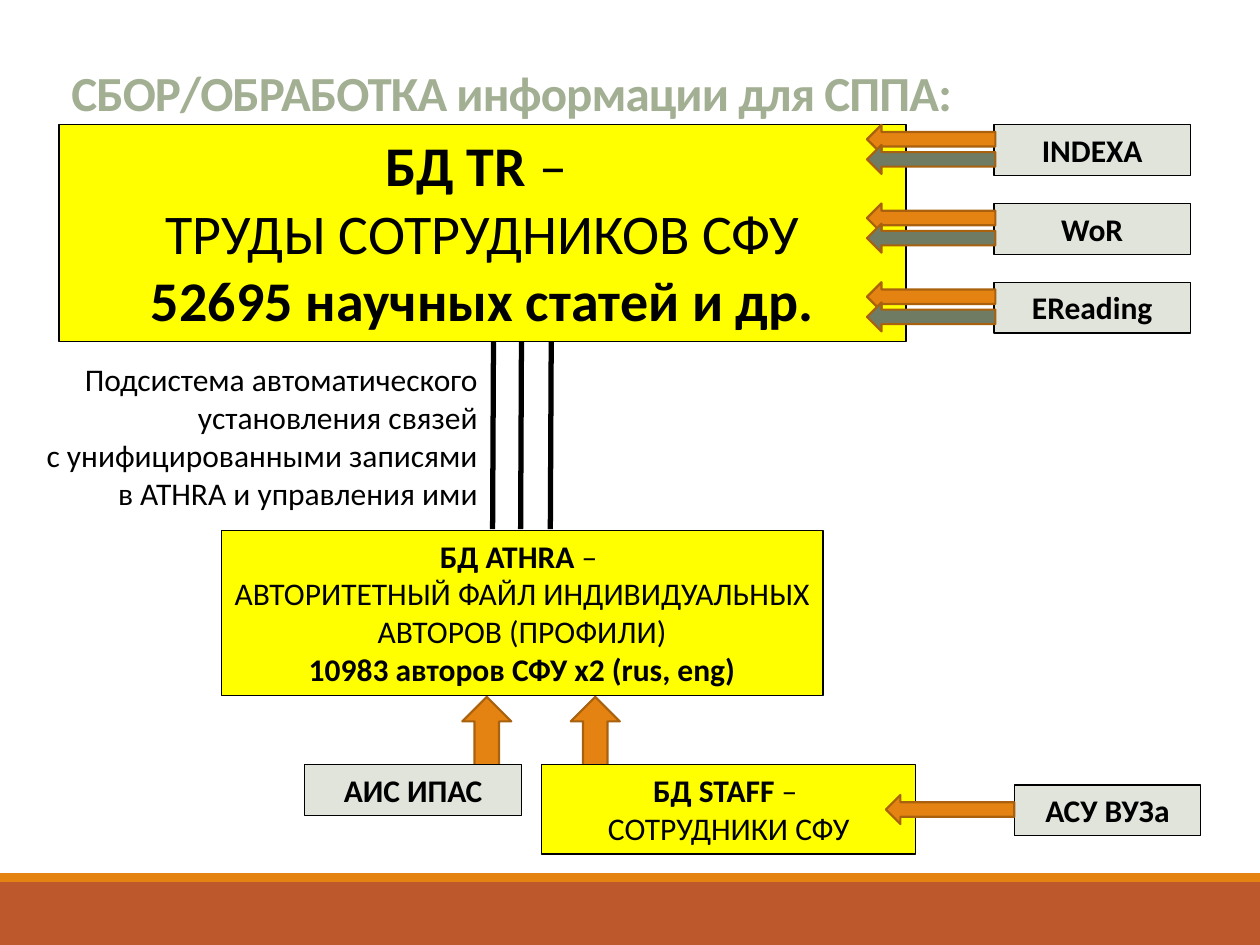
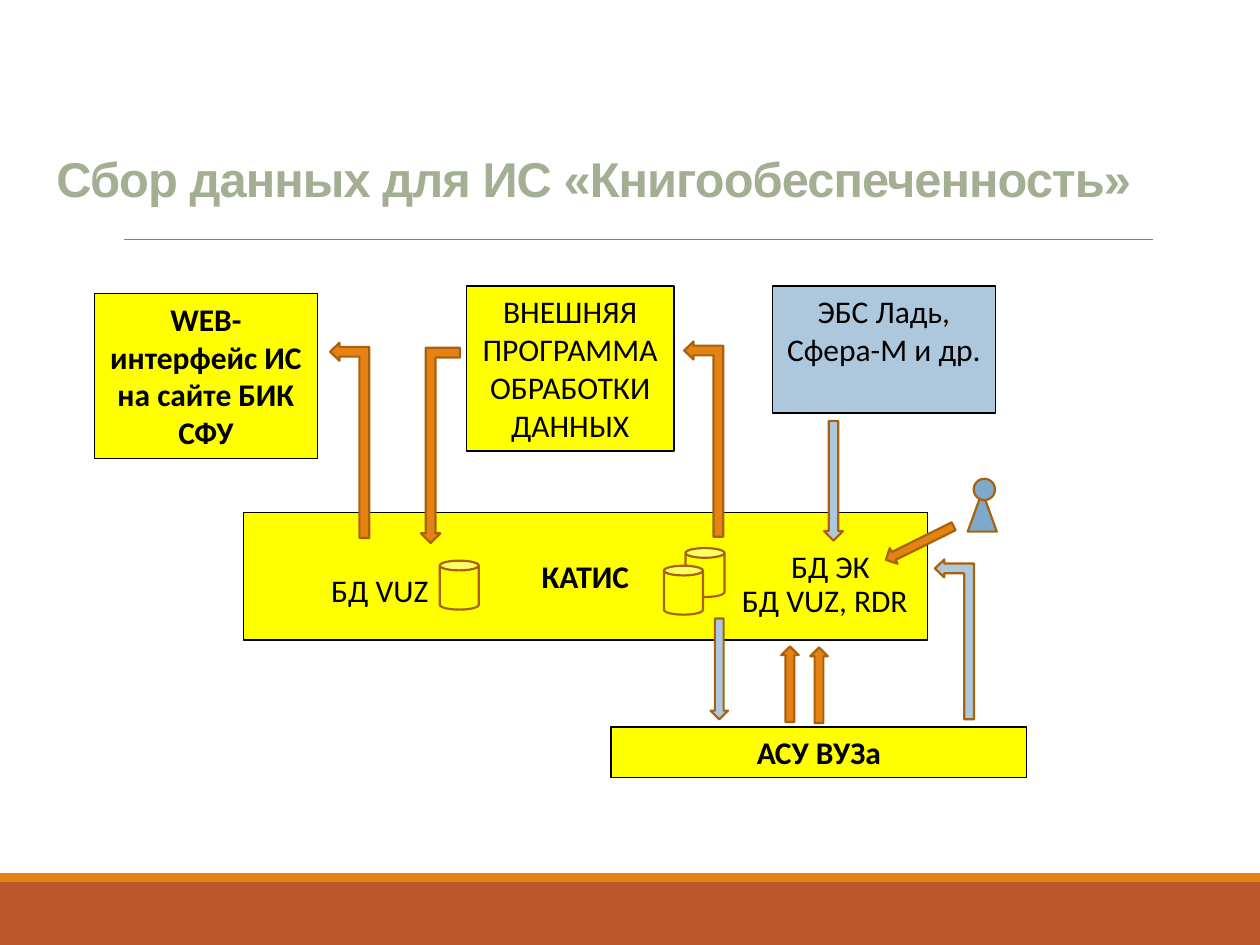
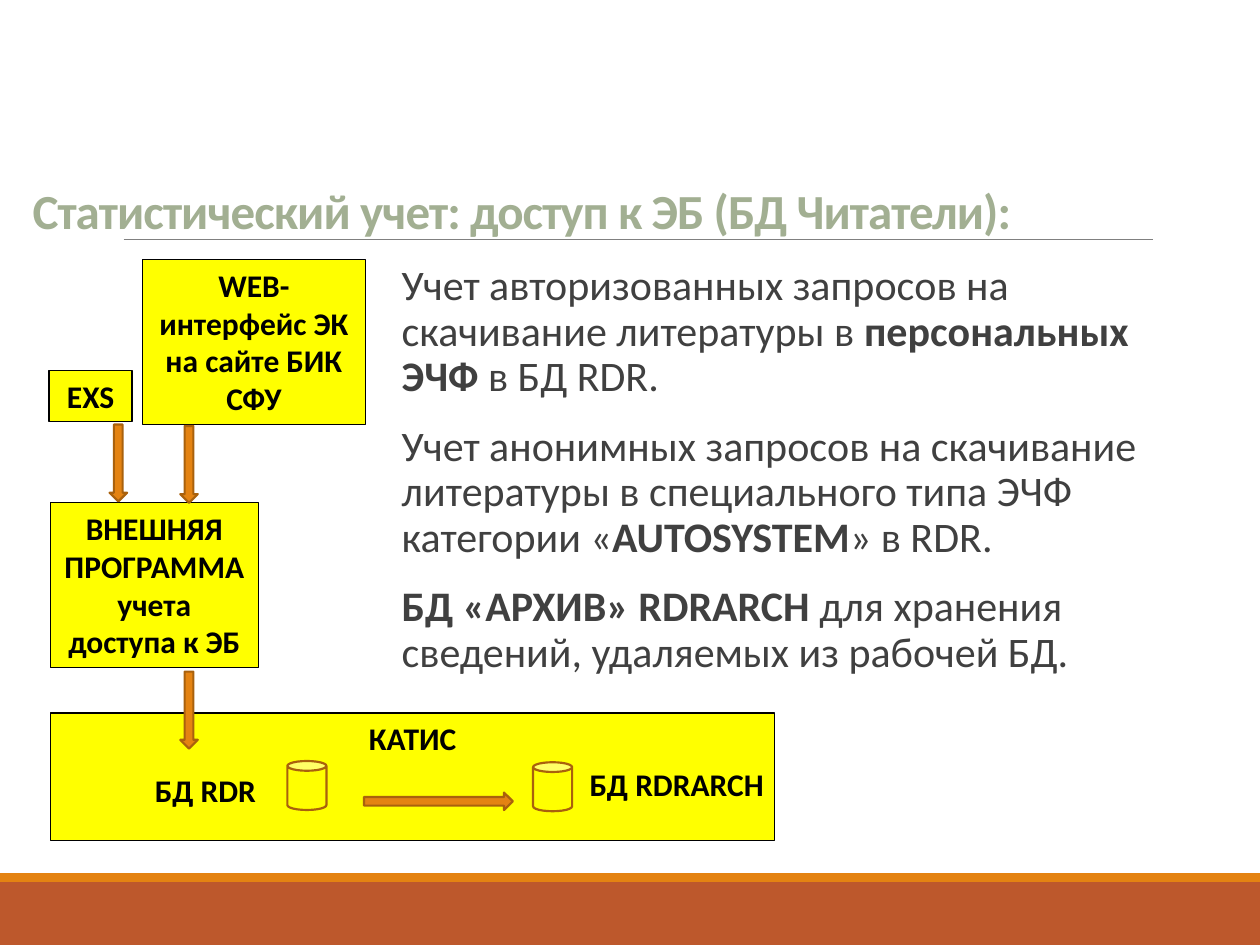
from lxml import etree
from pptx import Presentation
from pptx.dml.color import RGBColor
from pptx.enum.shapes import MSO_CONNECTOR, MSO_SHAPE
from pptx.enum.text import MSO_ANCHOR, PP_ALIGN
from pptx.oxml.ns import qn
from pptx.util import Pt

RECT, CAN, OVAL = MSO_SHAPE.RECTANGLE, MSO_SHAPE.CAN, MSO_SHAPE.OVAL
CONE = MSO_SHAPE.FLOWCHART_EXTRACT
LEFT, RIGHT = MSO_SHAPE.LEFT_ARROW, MSO_SHAPE.RIGHT_ARROW
UP, DOWN = MSO_SHAPE.UP_ARROW, MSO_SHAPE.DOWN_ARROW
BENT = MSO_SHAPE.BENT_UP_ARROW
STRAIGHT = MSO_CONNECTOR.STRAIGHT
TOP, MIDDLE, BOTTOM = MSO_ANCHOR.TOP, MSO_ANCHOR.MIDDLE, MSO_ANCHOR.BOTTOM
START, CENTER, END = PP_ALIGN.LEFT, PP_ALIGN.CENTER, PP_ALIGN.RIGHT

BLACK, GREY, DARK = "000000", "808080", "404040"
YELLOW, PALE, SAGE, MOSS = "FFFF00", "E0E4DB", "A2AF92", "6F7B63"
ORANGE, RUST, BROWN = "E48312", "BD582C", "A9610D"
SKY, BLUE = "ADC8DD", "7EA9CA"

LINE = 29       # height of a box with one line of text
BLOCK = 94.3    # height of a box with four lines
HALL = 72.7     # height of a box with three lines
SLIM = 10       # width of a thin arrow
TWIST = (0.25, 0.23, 0.24)


def color(code):
    return RGBColor.from_string(code)


class Deck:
    def __init__(self):
        self.prs = Presentation()
        self.prs.slide_width, self.prs.slide_height = Pt(720), Pt(540)
        self.slide = None

    def page(self, rule=True):
        """Start a slide with the bottom bands and, if wanted, the title rule."""
        self.slide = self.prs.slides.add_slide(self.prs.slide_layouts[6])
        self.shape(RECT, 0, 504, 720, 36, RUST, None)
        self.shape(RECT, 0, 499, 720, 5, ORANGE, None)
        if rule:
            self.line(70.6, 136.8, 658.8, 136.8, GREY, 0.5)

    def line(self, x1, y1, x2, y2, tint=BLACK, width=3):
        item = self.slide.shapes.add_connector(
            STRAIGHT, Pt(x1), Pt(y1), Pt(x2), Pt(y2))
        item.line.color.rgb = color(tint)
        item.line.width = Pt(width)
        etree.SubElement(item._element.spPr, qn("a:effectLst"))

    def shape(self, kind, x, y, w, h, fill=ORANGE, edge=BROWN, width=1.25,
              turn=0, bends=()):
        item = self.slide.shapes.add_shape(kind, Pt(x), Pt(y), Pt(w), Pt(h))
        item.shadow.inherit = False
        item.fill.solid()
        item.fill.fore_color.rgb = color(fill)
        if edge:
            item.line.color.rgb = color(edge)
            item.line.width = Pt(width)
        else:
            item.line.fill.background()
        item.rotation = turn
        for i, value in enumerate(bends):
            item.adjustments[i] = value
        return item

    def words(self, item, text, size=18, tint=BLACK, align=START, anchor=TOP,
              font="Calibri"):
        """Fill an item; each line is a paragraph, * toggles bold, | breaks."""
        frame = item.text_frame
        frame.word_wrap = True
        frame.vertical_anchor = anchor
        frame.text = text.replace("*", "").replace("|", "\v")
        for para, source in zip(frame.paragraphs, text.split("\n")):
            para.alignment = align
            if "*" in source:
                para.clear()
                for i, part in enumerate(source.split("*")):
                    for j, piece in enumerate(part.split("|")):
                        if j:
                            para.add_line_break()
                        if piece:
                            run = para.add_run()
                            run.text = piece
                            run.font.bold = i % 2 == 1
            for run in para.runs:
                run.font.name = font
                run.font.size = Pt(size)
                run.font.color.rgb = color(tint)
        return frame

    def box(self, text, x, y, w, h=LINE, fill=YELLOW, size=18, anchor=TOP):
        item = self.shape(RECT, x, y, w, h, fill, BLACK, 0.75)
        self.words(item, text, size, align=CENTER, anchor=anchor)

    def label(self, text, x, y, w, h=LINE, **style):
        item = self.slide.shapes.add_textbox(Pt(x), Pt(y), Pt(w), Pt(h))
        return self.words(item, text, **style)

    def title(self, text, x, y, w, h, size=28, font="Calibri"):
        frame = self.label(f"*{text}*", x, y, w, h, size=size, tint=SAGE,
                           anchor=BOTTOM, font=font)
        para = frame.paragraphs[0]
        para.line_spacing = 0.85
        for run in para.runs:
            run._r.get_or_add_rPr().set("spc", "-50")

    def can(self, x, y):
        self.shape(CAN, x, y, 22.3, 28, YELLOW)

    def body(self, text, x, y, w, h):
        frame = self.label(text, x, y, w, h, size=24, tint=DARK)
        frame.margin_right = 0
        for i, para in enumerate(frame.paragraphs):
            para.line_spacing = 0.9
            para.space_before = Pt(12 if i else 0)
            para.space_after = Pt(2)


def collect(deck):
    deck.page(rule=False)
    for x in (282, 298, 315):
        deck.line(x, 195, x - 0.5, 302.4)
    deck.title("СБОР/ОБРАБОТКА информации для СППА:", 33.8, 16.6, 648, 56.2)
    deck.box("*БД TR* – |ТРУДЫ СОТРУДНИКОВ СФУ\n*52695 научных статей и др.*",
             33.8, 71.3, 484, 123.8, size=32)
    deck.box("*БД ATHRA *– |АВТОРИТЕТНЫЙ ФАЙЛ ИНДИВИДУАЛЬНЫХ АВТОРОВ (ПРОФИЛИ)"
             "\n*10983 авторов СФУ х2 (rus, eng)*", 126.4, 303.1, 344, BLOCK)
    for i, name in enumerate(("INDEXA", "WoR", "EReading")):
        y = 71.3 + 45 * i
        deck.box(f"*{name}*", 568, y, 112.3, fill=PALE)
        for drop, fill in ((0, ORANGE), (11.5, MOSS)):
            deck.shape(LEFT, 495.4, y + drop, 73.4, 16.6, fill)
    deck.shape(UP, 264.2, 398.2, 28, 39.6)
    deck.box("*АИС ИПАС*", 174.2, 437, 123.8, fill=PALE)
    deck.shape(UP, 326.2, 398.2, 28, 73.4)
    deck.box("*БД STAFF* – |СОТРУДНИКИ СФУ", 309.6, 437, 213.8, 51)
    deck.box("*АСУ ВУЗа*", 579.6, 448.6, 106.6, fill=PALE)
    deck.shape(LEFT, 506.2, 454.3, 73.4, 16.6)
    deck.label("Подсистема автоматического установления связей\n"
               "с унифицированными записями\nв ATHRA и управления ими",
               -29.5, 202.3, 309.6, BLOCK, align=END)


def supply(deck):
    deck.page()
    deck.title("Сбор данных для ИС «Книгообеспеченность»",
               25.2, 65, 669.6, 56.9, 27.9, "Arial")
    deck.box("*КАТИС*", 139, 293, 391, HALL, anchor=MIDDLE)
    for spot in ((251.3, 320.4), (391.7, 313.2), (379.4, 323.3)):
        deck.can(*spot)
    deck.label("БД VUZ", 182.2, 322.6, 72)
    deck.label("БД VUZ, RDR", 416.9, 328.3, 112)
    deck.label("БД ЭК", 445, 308.9, 62)
    deck.box("*АСУ ВУЗа*", 349.2, 415.4, 237.6)
    deck.box("ВНЕШНЯЯ ПРОГРАММА ОБРАБОТКИ ДАННЫХ",
             266.4, 163.4, 118.8, BLOCK)
    deck.box("*WEB-интерфейс ИС на сайте БИК СФУ*", 54, 167.8, 127.4, BLOCK)
    deck.box("ЭБС Ладь, Сфера-М и др.", 441.4, 163.4, 127.4, HALL, SKY)
    for x, y, w, fill in ((144, 240.5, 111.6, ORANGE),
                          (346.3, 239.8, 111.6, ORANGE),
                          (499.7, 354.2, 91.4, SKY)):
        deck.shape(BENT, x, y, w, 22.3, fill, turn=270, bends=TWIST)
    deck.shape(BENT, 240.5, 198.7, 22.3, 111.6, turn=180)
    for x, y in ((446.4, 369.4), (463, 370)):
        deck.shape(UP, x, y, SLIM, 43.2)
    deck.shape(DOWN, 470.9, 240.5, 10.8, 68.4, SKY)
    deck.shape(DOWN, 406, 353.5, SLIM, 57.6, SKY)
    deck.shape(UP, 520.6, 288.7, SLIM, 43.2, turn=243.7)
    deck.shape(CONE, 553, 280.8, 16.6, 23, BLUE)
    deck.shape(OVAL, 556.4, 273.6, 12.2, 12.2, BLUE)


def access(deck):
    deck.page()
    deck.title("Статистический учет: доступ к ЭБ (БД Читатели):",
               11.5, 73.4, 686, 67)
    deck.box("*КАТИС*", 28.8, 407.5, 414, HALL)
    deck.can(164.2, 434.9)
    deck.can(304.6, 435.6)
    deck.label("*БД RDR*", 81.4, 437, 85)
    deck.label("*БД RDRARCH*", 329.8, 433.4, 117)
    deck.box("*ВНЕШНЯЯ ПРОГРАММА учета доступа к ЭБ*",
             28.8, 287.3, 118.8, BLOCK)
    deck.box("*WEB-интерфейс ЭК на сайте БИК СФУ*", 81.4, 148.3, 127.4, BLOCK)
    deck.box("*EXS*", 28, 211.7, 47.5)
    deck.shape(RIGHT, 208, 452.9, 85, SLIM)
    for x, y in ((103, 383.8), (103, 243.4), (62.6, 242.6)):
        deck.shape(DOWN, x, y, SLIM, 44)
    deck.body("Учет авторизованных запросов на скачивание литературы в "
              "*персональных ЭЧФ *в БД RDR.\n"
              "Учет анонимных запросов на скачивание литературы в специального "
              "типа ЭЧФ категории «*AUTOSYSTEM*» в RDR.\n"
              "*БД «АРХИВ» RDRARCH *для хранения сведений, удаляемых из "
              "рабочей БД.", 222.5, 147.6, 436.3, 255.6)


def main():
    deck = Deck()
    for build in (collect, supply, access):
        build(deck)
    deck.prs.save("out.pptx")


if __name__ == "__main__":
    main()
